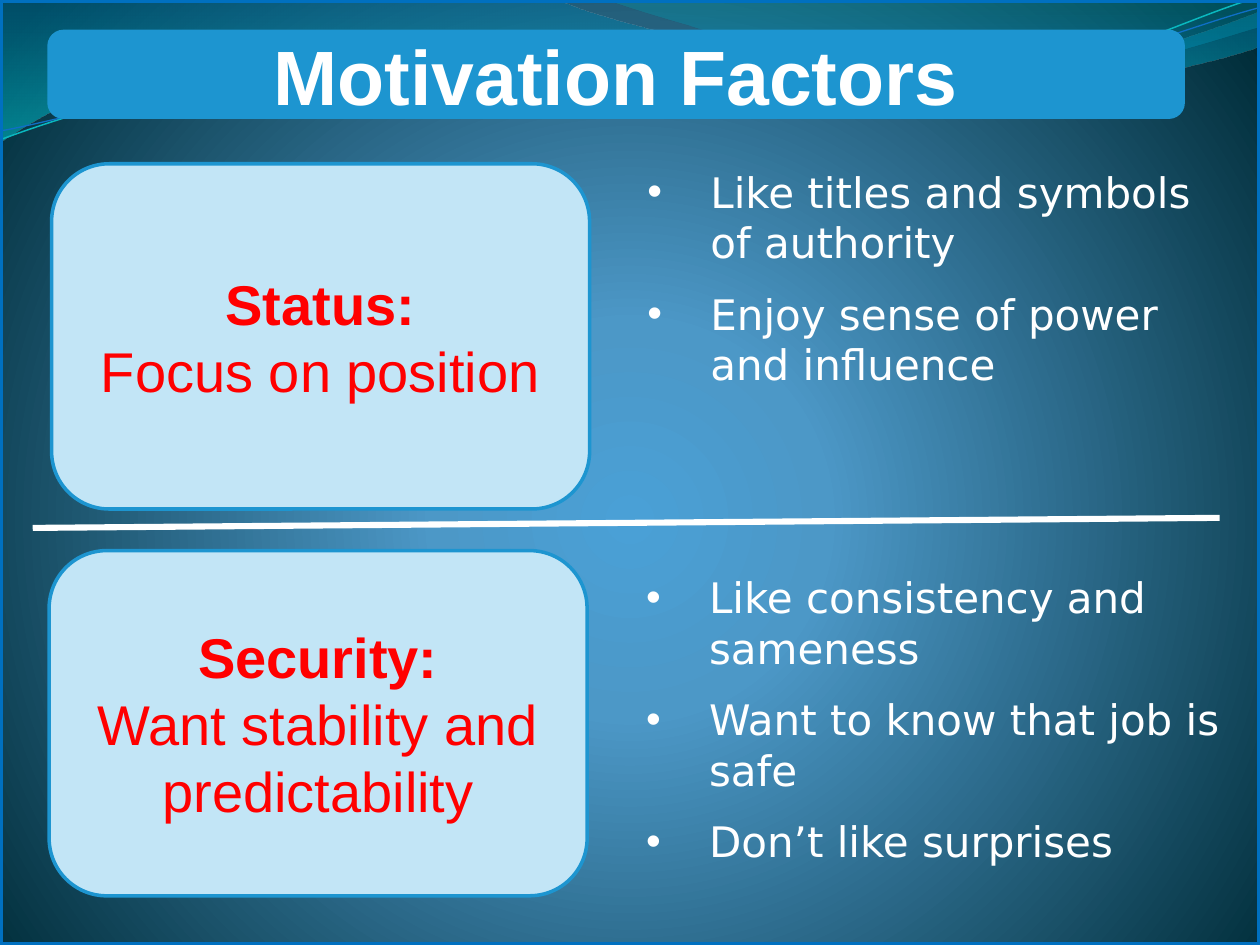
"""Build the Motivation Factors slide with python-pptx."""
from math import cos, radians, sin

from lxml import etree
from pptx import Presentation
from pptx.dml.color import RGBColor
from pptx.enum.shapes import MSO_CONNECTOR, MSO_SHAPE
from pptx.enum.text import MSO_ANCHOR, MSO_AUTO_SIZE, PP_ALIGN
from pptx.oxml.ns import qn
from pptx.util import Inches, Pt

ROUNDED, RECTANGLE = MSO_SHAPE.ROUNDED_RECTANGLE, MSO_SHAPE.RECTANGLE
STRAIGHT = MSO_CONNECTOR.STRAIGHT
CENTER, LEFT = PP_ALIGN.CENTER, PP_ALIGN.LEFT
MIDDLE, TOP = MSO_ANCHOR.MIDDLE, MSO_ANCHOR.TOP
GROW = MSO_AUTO_SIZE.SHAPE_TO_FIT_TEXT
COLORS = {
    "white": "FFFFFF", "red": "FF0000", "blue": "1D95D0", "pale": "C2E5F6",
    "frame": "0070C0", "glow": "4AA0D6", "mid": "4C98C7", "night": "002C38",
    "deep": "0074A1", "aqua": "00C6CF", "teal": "00A1A9", "ocean": "008BBF",
    "turquoise": "0AB8BF", "royal": "0F6FC6",
}
RGB = {name: RGBColor.from_string(value) for name, value in COLORS.items()}


def write_text(frame, lines, size, font, color, bold=(), align=LEFT,
               anchor=TOP, bullet=None, after=None):
    frame.word_wrap = True
    frame.vertical_anchor = anchor
    for index, line in enumerate(lines):
        paragraph = frame.paragraphs[0] if index == 0 else frame.add_paragraph()
        paragraph.alignment = align
        if after is not None:
            paragraph.space_after = Pt(after)
        if bullet:
            properties = paragraph._p.get_or_add_pPr()
            properties.set("marL", str(Inches(0.5)))
            properties.set("indent", str(Inches(-0.5)))
            etree.SubElement(properties, qn("a:buFont"), typeface="Arial")
            etree.SubElement(properties, qn("a:buChar"), char=bullet)
        run = paragraph.add_run()
        run.text = line
        run.font.size = Pt(size)
        run.font.name = font
        run.font.bold = index in bold
        run.font.color.rgb = RGB[color]


def apply_gradient(fill, owner, stops, center=None):
    fill.gradient()
    gradient = next(owner.iter(qn("a:gradFill")))
    gradient.clear()
    gradient.set("rotWithShape", "1")
    stop_list = etree.SubElement(gradient, qn("a:gsLst"))
    for position, color, opacity in stops:
        stop = etree.SubElement(stop_list, qn("a:gs"), pos=str(position * 1000))
        tone = etree.SubElement(stop, qn("a:srgbClr"), val=COLORS[color])
        if opacity < 100:
            etree.SubElement(tone, qn("a:alpha"), val=str(opacity * 1000))
    if center:
        circle = etree.SubElement(gradient, qn("a:path"), path="circle")
        edges = {side: str(share * 1000) for side, share in zip("ltrb", center)}
        etree.SubElement(circle, qn("a:fillToRect"), **edges)
    else:
        etree.SubElement(gradient, qn("a:lin"), ang="5400000", scaled="1")


presentation = Presentation()
presentation.slide_width, presentation.slide_height = Inches(10), Inches(7.5)
slide = presentation.slides.add_slide(presentation.slide_layouts[6])
shapes = slide.shapes
apply_gradient(slide.background.fill, slide._element,
               [(0, "glow", 100), (25, "mid", 100), (100, "night", 100)],
               center=(10, 110, 10, 100))

WAVES = [
    ([(0, 0), (4.4, -0.01), (4.76, 0.17, 6.64, 0.63, 7.58, 0.63),
      (8.53, 0.63, 9.58, 0.26, 10, 0.09), (10.01, 0.36),
      (9.83, 0.44, 8.7, 0.76, 7.46, 0.75), (6.22, 0.75, 3.82, 0.28, 2.57, 0.34),
      (1.29, 0.36, 0.46, 0.83, -0.01, 1.13), (0, 0)],
     [(0, "deep", 45), (100, "aqua", 55)], None),
    ([(4.79, -0.01), (5.09, 0.11, 6.82, 0.62, 7.69, 0.65),
      (8.56, 0.69, 9.61, 0.32, 10, 0.21), (10, 0), (4.79, -0.01)],
     [(0, "teal", 30), (80, "ocean", 45)], None),
    ([(0, 1.11), (0.48, 0.93, 1.58, 0.57, 2.77, 0.52),
      (3.95, 0.47, 5.93, 0.89, 7.13, 0.8), (8.33, 0.71, 9.38, 0.15, 9.98, -0.02)],
     None, ("turquoise", 0.85, 4.99, 0.58)),
    ([(0, 1.04), (0.47, 0.96, 1.64, 0.61, 2.83, 0.56),
      (4.03, 0.51, 5.97, 0.84, 7.17, 0.75), (8.36, 0.67, 9.41, 0.21, 10, 0.06)],
     None, ("royal", 0.75, 5, 0.59)),
]
TILT = 2.7
for segments, stops, stroke in WAVES:
    points = [segment[i:i + 2] for segment in segments
              for i in range(0, len(segment), 2)]
    if stroke:
        color, width, middle_x, middle_y = stroke
        c, s = cos(radians(TILT)), sin(radians(TILT))
        points = [(middle_x + (x - middle_x) * c - (y - middle_y) * s,
                   middle_y + (x - middle_x) * s + (y - middle_y) * c)
                  for x, y in points]
    outline = [(Inches(x), Inches(y)) for x, y in points]
    builder = shapes.build_freeform(*outline[0], scale=1.0)
    builder.add_line_segments(outline[1:], close=stops is not None)
    wave = builder.convert_to_shape()
    wave.shadow.inherit = False
    edges = iter(list(wave._element.iter(qn("a:lnTo"))))
    for segment in segments[1:]:
        edge = next(edges)
        if len(segment) == 6:
            edge.tag = qn("a:cubicBezTo")
            for follower in (next(edges), next(edges)):
                edge.append(follower[0])
                follower.getparent().remove(follower)
    if stops:
        apply_gradient(wave.fill, wave._element, stops)
        wave.line.fill.background()
    else:
        wave.rotation = 360 - TILT
        wave.fill.background()
        wave.line.color.rgb = RGB[color]
        wave.line.width = Pt(width)

PANELS = [
    (ROUNDED, (0.39, 0.25, 9, 0.68), "blue", "blue", 2,
     ["Motivation Factors"], 44, "white"),
    (RECTANGLE, (0, 0, 10, 7.5), None, "frame", 3.5, [], None, None),
    (ROUNDED, (0.41, 1.3, 4.27, 2.74), "pale", "blue", 2,
     ["Status:", "Focus on position"], 32, "red"),
    (ROUNDED, (0.39, 4.37, 4.27, 2.74), "pale", "blue", 2,
     ["Security:", "Want stability and predictability"], 32, "red"),
]
for kind, box, fill, edge, width, lines, size, color in PANELS:
    panel = shapes.add_shape(kind, *map(Inches, box))
    panel.shadow.inherit = False
    if fill:
        panel.fill.solid()
        panel.fill.fore_color.rgb = RGB[fill]
    else:
        panel.fill.background()
    panel.line.color.rgb = RGB[edge]
    panel.line.width = Pt(width)
    write_text(panel.text_frame, lines, size, "Arial", color, bold=(0,),
               align=CENTER, anchor=MIDDLE)

divider = shapes.add_connector(STRAIGHT, *map(Inches, (0.26, 4.19, 9.68, 4.11)))
divider.line.color.rgb = RGB["white"]
divider.line.width = Pt(3.5)
etree.SubElement(divider._element.spPr, qn("a:effectLst"))

TRAITS = [
    ((5.04, 1.27, 4.84, 1.88),
     ["Like titles and symbols of authority", "Enjoy sense of power and influence"]),
    ((5.03, 4.49, 4.84, 2.46),
     ["Like consistency and sameness", "Want to know that job is safe",
      "Don’t like surprises"]),
]
for box, lines in TRAITS:
    traits = shapes.add_textbox(*map(Inches, box)).text_frame
    traits.auto_size = GROW
    write_text(traits, lines, 24, "DejaVu Sans", "white", bullet="•", after=12)

presentation.save("out.pptx")
